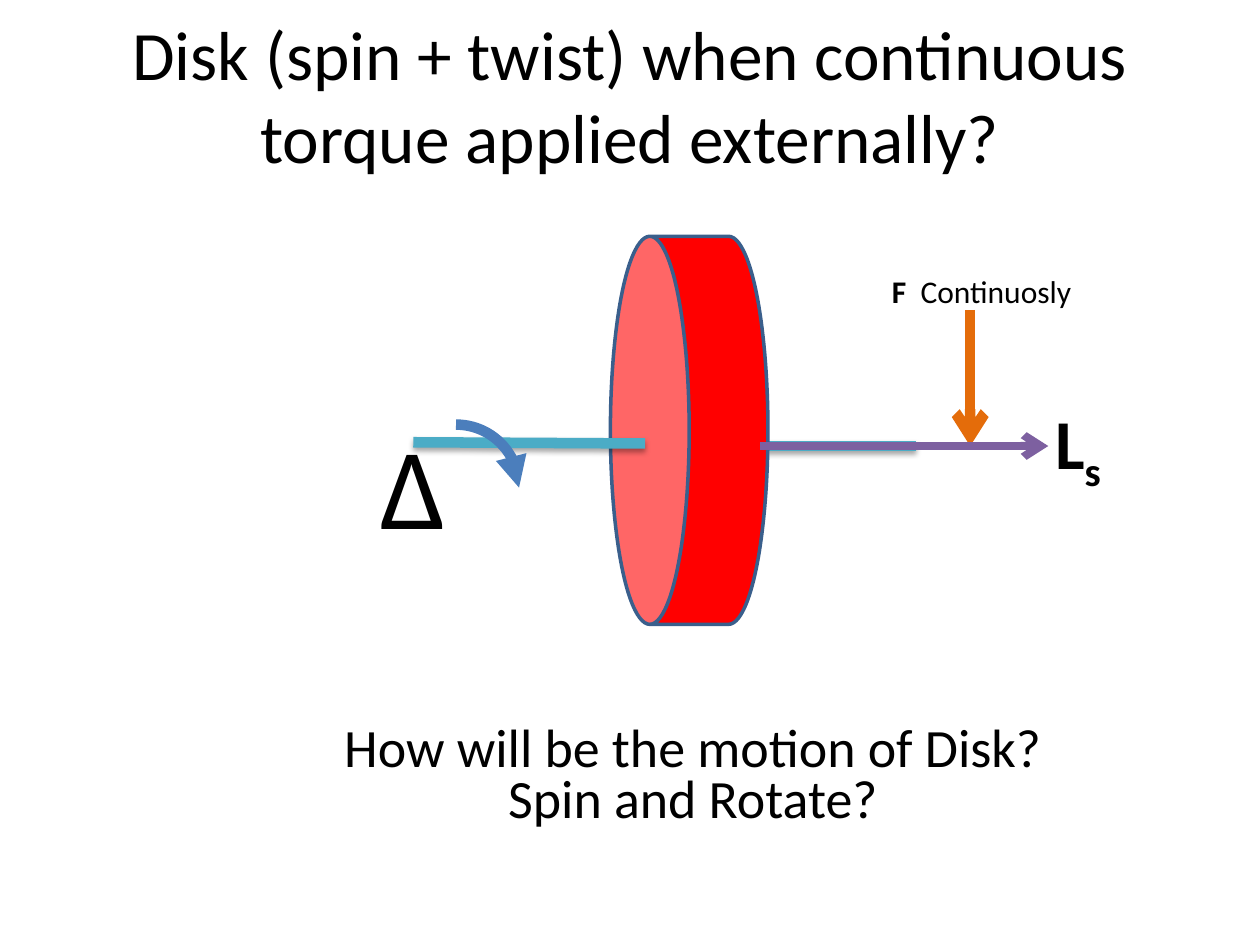
import pptx
import pptx.util
import pptx.dml.color
from lxml import etree
from pptx.enum.shapes import MSO_CONNECTOR, MSO_SHAPE
from pptx.enum.text import MSO_ANCHOR, MSO_AUTO_SIZE, PP_ALIGN
from pptx.oxml.ns import qn

Inches, Pt = pptx.util.Inches, pptx.util.Pt

TITLE = "Disk (spin + twist) when continuous torque applied externally?"
QUESTION = ["How will be the motion of Disk?", "Spin and Rotate?"]
# left, top, width, height, size, runs as (text, format)
LABELS = [
    (2.92, 3.24, 0.77, 1.21, 66, [("Δ", {})]),
    (6.98, 2.11, 1.64, 0.4, 18, [("F  ", {"bold": True}), ("Continuosly", {"bold": False})]),
    (8.15, 3.12, 0.71, 0.77, 40, [(" L", {"bold": True}), ("s", {"bold": True, "base": -25})]),
]
RIGHT_AXLE = (5.43, 3.54, 7.27, 3.54)
LEFT_AXLE = (3.28, 3.51, 5.12, 3.52)
AXLE_COLOUR = "4BACC6"
DISK = (3.93, 2.79, 3.08, 1.25)
# x1, y1, x2, y2, colour, width
ARROWS = [
    (7.7, 2.46, 7.7, 3.54, "E46C0A", 6),
    (6.03, 3.54, 8.32, 3.54, "7D60A0", 4.5),
]
SPIN = (3.12, 3.37, 1, 1)


def rgb(value):
    return pptx.dml.color.RGBColor.from_string(value)


def box(*lengths):
    return [Inches(v) for v in lengths]


def set_line(shape, colour, width):
    shape.line.color.rgb = rgb(colour)
    shape.line.width = Pt(width)


def add_arrowhead(shape, kind):
    etree.SubElement(shape.line._get_or_add_ln(), qn("a:tailEnd"), type=kind)


def add_line(shapes, ends, colour, width):
    """Add a straight connector and return it with its empty effect list."""
    line = shapes.add_connector(MSO_CONNECTOR.STRAIGHT, *box(*ends))
    set_line(line, colour, width)
    return line, etree.SubElement(line._element.spPr, qn("a:effectLst"))


def add_axle(shapes, ends):
    effects = add_line(shapes, ends, AXLE_COLOUR, 6)[1]
    shadow = etree.SubElement(effects, qn("a:outerShdw"), blurRad=str(Pt(3.1)),
                              dist=str(Pt(1.8)), dir="5400000", rotWithShape="0")
    black = etree.SubElement(shadow, qn("a:srgbClr"), val="000000")
    etree.SubElement(black, qn("a:alpha"), val="35000")


def add_run(p, text, size, base=None, **fmt):
    r = p.add_run()
    r.text = text
    fmt = {"name": "Calibri", "size": Pt(size), **fmt}
    for name, value in fmt.items():
        setattr(r.font, name, value)
    r.font.color.rgb = rgb("000000")
    if base:
        r.font._element.set("baseline", str(base * 1000))


def main():
    prs = pptx.Presentation()
    prs.slide_width, prs.slide_height = box(10, 7.5)
    s = prs.slides.add_slide(prs.slide_layouts[5])

    title = s.shapes.title
    title.left, title.top, title.width, title.height = box(0.5, 0.25, 9, 1)
    tf = title.text_frame
    tf.vertical_anchor, tf.auto_size = MSO_ANCHOR.MIDDLE, MSO_AUTO_SIZE.NONE
    tf.paragraphs[0].alignment = PP_ALIGN.CENTER
    add_run(tf.paragraphs[0], TITLE, 39.6)

    tf = s.shapes.add_textbox(*box(1, 5.67, 9, 1)).text_frame
    tf.word_wrap, tf.vertical_anchor = True, MSO_ANCHOR.MIDDLE
    for i, text in enumerate(QUESTION):
        p = tf.add_paragraph() if i else tf.paragraphs[0]
        p.alignment, p.line_spacing = PP_ALIGN.CENTER, 0.8
        add_run(p, text, 30.8)

    wheel = s.shapes.add_group_shape().shapes
    add_axle(wheel, RIGHT_AXLE)
    disk = wheel.add_shape(MSO_SHAPE.CAN, *box(*DISK))
    disk.rotation = 270
    disk.adjustments[0] = 0.5
    disk.shadow.inherit = False
    disk.fill.solid()
    disk.fill.fore_color.rgb = rgb("FF0000")
    set_line(disk, "3A5F8C", 2)
    add_axle(wheel, LEFT_AXLE)

    for *place, size, runs in LABELS:
        tf = s.shapes.add_textbox(*box(*place)).text_frame
        tf.word_wrap, tf.auto_size = False, MSO_AUTO_SIZE.SHAPE_TO_FIT_TEXT
        for text, fmt in runs:
            add_run(tf.paragraphs[0], text, size, **fmt)

    for *ends, colour, width in ARROWS:
        add_arrowhead(add_line(s.shapes, ends, colour, width)[0], "arrow")

    spin = s.shapes.add_shape(MSO_SHAPE.ARC, *box(*SPIN))
    spin.shadow.inherit = False
    spin.fill.background()
    set_line(spin, "4B7EBC", 6)
    add_arrowhead(spin, "triangle")

    prs.save("out.pptx")


if __name__ == "__main__":
    main()
